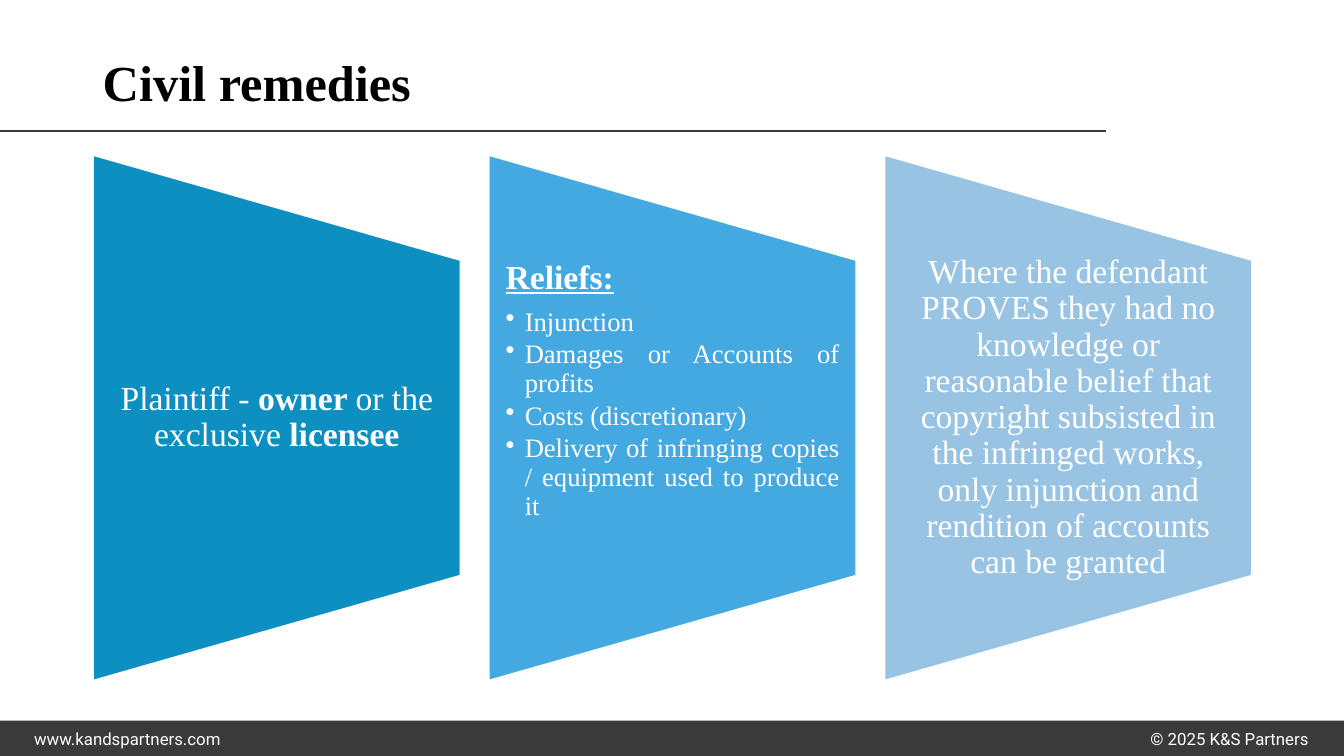
import pptx
import pptx.dml.color
import pptx.enum.shapes
import pptx.enum.text
import pptx.oxml.ns
import pptx.util
from lxml import etree

Inches = pptx.util.Inches
Pt = pptx.util.Pt
ALIGN = pptx.enum.text.PP_ALIGN
ANCHOR = pptx.enum.text.MSO_ANCHOR
SHAPES = pptx.enum.shapes.MSO_SHAPE
qn = pptx.oxml.ns.qn

COLORS = {
    "white": "FFFFFF",
    "black": "000000",
    "charcoal": "3A3A3A",
    "deep": "0E8FC1",
    "bright": "44A9E0",
    "pale": "98C3E2",
}
SERIF = "Times New Roman"

# Font formats
FOOTER = {"name": "Roboto", "size": Pt(12)}
TITLE = {"name": SERIF, "size": Pt(36), "bold": True}
BODY = {"name": SERIF, "size": Pt(24)}
STRONG = {**BODY, "bold": True}
HEADING = {**STRONG, "underline": True}
ITEM = {"name": SERIF, "size": Pt(19)}

# Paragraph formats
PLAIN = {"alignment": ALIGN.LEFT}
CENTERED = {"alignment": ALIGN.CENTER}
TIGHT = {"alignment": ALIGN.LEFT, "line_spacing": 0.9}
CARD = {"alignment": ALIGN.CENTER, "line_spacing": 0.9, "space_after": Pt(8.4)}
CARD_HEADING = {**CARD, "alignment": ALIGN.JUSTIFY}
CARD_ITEM = {**CARD_HEADING, "space_after": Pt(2.85), "level": 1}

# Card geometry
CARD_LEFT, CARD_STEP, CARD_WIDTH = 0.92, 3.925, 3.65
CARD_CENTER_Y, CARD_HEIGHT, TEXT_HEIGHT = 4.145, 5.22, 3.13

# Each card: fill, anchor, paragraphs as (format, runs)
CARDS = [
    ("deep", ANCHOR.MIDDLE, [
        (CARD, [("Plaintiff - ", BODY), ("owner ", STRONG),
                ("or the exclusive ", BODY), ("licensee", STRONG)]),
    ]),
    ("bright", ANCHOR.TOP, [(CARD_HEADING, [("Reliefs:", HEADING)])] + [
        (CARD_ITEM, [(item, ITEM)]) for item in (
            "Injunction",
            "Damages or Accounts of profits",
            "Costs (discretionary)",
            "Delivery of infringing copies / equipment used to produce it",
        )
    ]),
    ("pale", ANCHOR.MIDDLE, [
        (CARD, [("Where the defendant PROVES they had no knowledge or "
                 "reasonable belief that copyright subsisted in the infringed "
                 "works, only injunction and rendition of accounts can be "
                 "granted", BODY)]),
    ]),
]


def rgb(color):
    return pptx.dml.color.RGBColor.from_string(COLORS[color])


def apply(target, values):
    for name, value in values.items():
        setattr(target, name, value)


def add_bullet(paragraph):
    properties = paragraph._p.get_or_add_pPr()
    properties.set("marL", str(Inches(0.19)))
    properties.set("indent", str(Inches(-0.19)))
    etree.SubElement(properties, qn("a:buChar")).set("char", "•")


def add_text(slide, box, paragraphs, color="white", anchor=ANCHOR.MIDDLE, margins=None):
    shape = slide.shapes.add_textbox(*map(Inches, box))
    frame = shape.text_frame
    apply(frame, {"word_wrap": True, "vertical_anchor": anchor, **(margins or {})})
    for index, (paragraph_format, runs) in enumerate(paragraphs):
        paragraph = frame.add_paragraph() if index else frame.paragraphs[0]
        if paragraph_format is CARD_ITEM:
            add_bullet(paragraph)
        apply(paragraph, paragraph_format)
        for text, font_format in runs:
            run = paragraph.add_run()
            run.text = text
            apply(run.font, font_format)
            run.font.color.rgb = rgb(color)


def add_filled_shape(slide, kind, box, fill, outline=None):
    shape = slide.shapes.add_shape(kind, *map(Inches, box))
    shape.shadow.inherit = False
    shape.fill.solid()
    shape.fill.fore_color.rgb = rgb(fill)
    if outline:
        shape.line.color.rgb = rgb(outline)
        shape.line.width = Pt(1.5)
    else:
        shape.line.fill.background()
    return shape


def add_rule(slide, start, end):
    connector = slide.shapes.add_connector(
        pptx.enum.shapes.MSO_CONNECTOR.STRAIGHT, *map(Inches, (*start, *end)))
    connector.line.color.rgb = rgb("charcoal")
    connector.line.width = Pt(1)
    etree.SubElement(connector._element.spPr, qn("a:effectLst"))


def add_card(slide, left, fill, anchor, paragraphs):
    # The trapezoid lies on its side, so its box is turned about its centre
    box = (left + (CARD_WIDTH - CARD_HEIGHT) / 2, CARD_CENTER_Y - CARD_WIDTH / 2,
           CARD_HEIGHT, CARD_WIDTH)
    trapezoid = add_filled_shape(
        slide, SHAPES.FLOWCHART_MANUAL_OPERATION, box, fill, "white")
    trapezoid.rotation = 270
    margins = {"margin_left": Inches(0.17), "margin_right": Inches(0.17),
               "margin_top": 0, "margin_bottom": 0}
    text_box = (left, CARD_CENTER_Y - TEXT_HEIGHT / 2, CARD_WIDTH, TEXT_HEIGHT)
    add_text(slide, text_box, paragraphs, anchor=anchor, margins=margins)


def main():
    presentation = pptx.Presentation()
    presentation.slide_width = Inches(13.33)
    presentation.slide_height = Inches(7.5)
    slide = presentation.slides.add_slide(presentation.slide_layouts[6])

    # Footer
    add_filled_shape(slide, SHAPES.RECTANGLE, (0, 7.15, 13.33, 0.35), "charcoal")
    add_text(slide, (0.24, 7.15, 2.28, 0.35),
             [(PLAIN, [("www.kandspartners.com", FOOTER)])])
    add_text(slide, (11.18, 7.16, 2.03, 0.34),
             [(CENTERED, [("© 2025 K&S Partners", FOOTER)])])

    # Title
    add_rule(slide, (0, 1.3), (10.97, 1.3))
    add_text(slide, (0.92, 0.4, 10.05, 0.9),
             [(TIGHT, [("Civil remedies", TITLE)])], color="black")

    # Cards
    for index, card in enumerate(CARDS):
        add_card(slide, CARD_LEFT + index * CARD_STEP, *card)

    presentation.save("out.pptx")


if __name__ == "__main__":
    main()
